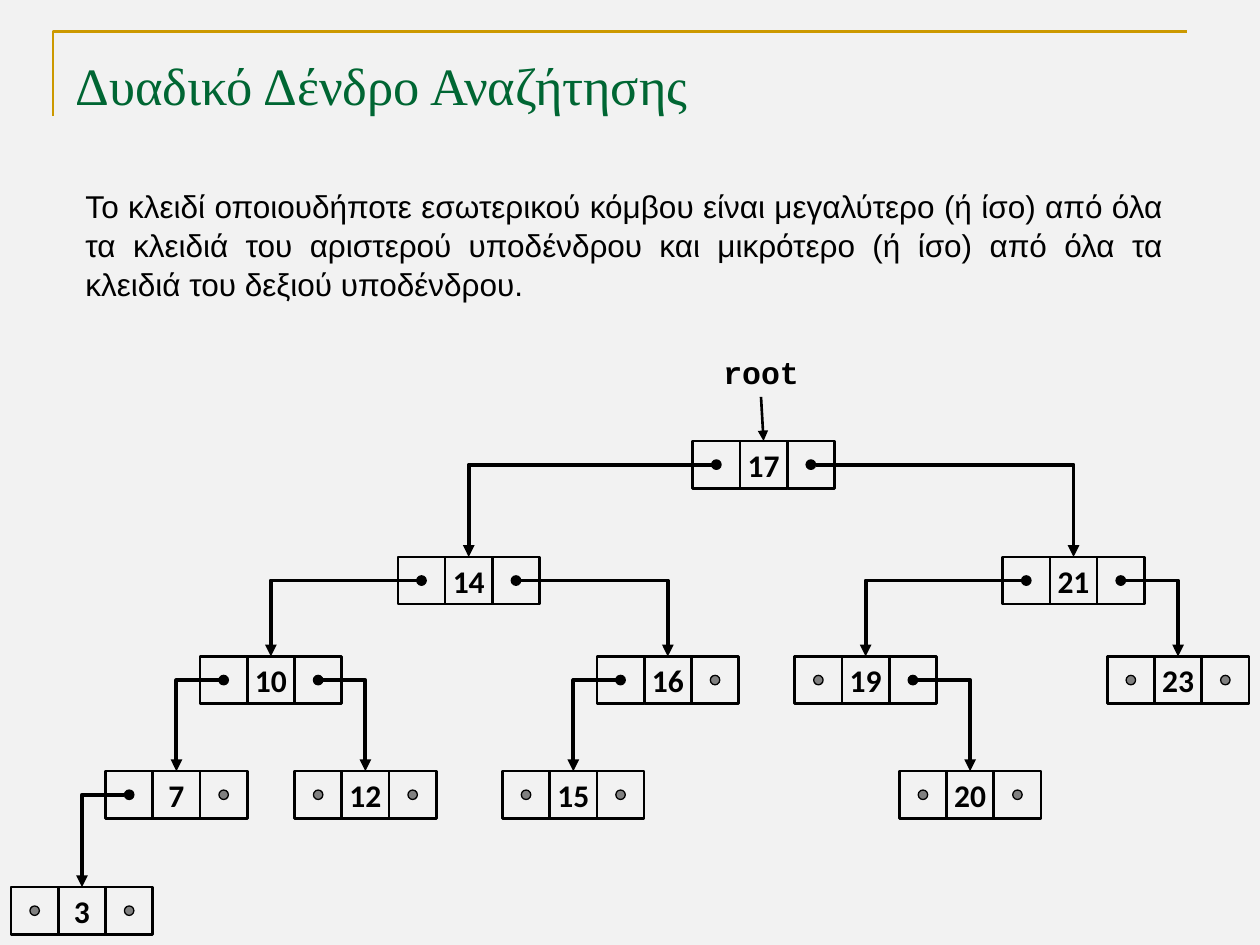
from dataclasses import dataclass
from typing import Optional

from lxml.etree import SubElement
from pptx import Presentation
from pptx.dml.color import RGBColor
from pptx.enum.shapes import MSO_CONNECTOR, MSO_SHAPE
from pptx.enum.text import MSO_ANCHOR, PP_ALIGN
from pptx.oxml.ns import qn
from pptx.util import Inches, Pt

PAPER = RGBColor(0xF2, 0xF2, 0xF2)
BLACK = RGBColor(0, 0, 0)
GREY = RGBColor(0x80, 0x80, 0x80)
GOLD = RGBColor(0xCC, 0x99, 0x00)
GREEN = RGBColor(0x00, 0x66, 0x33)

CELL = 0.375  # side of one square cell
DOT = 0.075  # diameter of a pointer dot
LEVEL_TOPS = (3.5, 4.42, 5.21, 6.12, 7.04)


@dataclass(frozen=True)
class Node:
    key: int
    center: float
    level: int
    left: Optional[int] = None
    right: Optional[int] = None

    @property
    def top(self) -> float:
        return LEVEL_TOPS[self.level]

    @property
    def middle(self) -> float:
        return self.top + CELL / 2


TREE = {node.key: node for node in (
    Node(17, 6.06, 0, 14, 21),
    Node(14, 3.72, 1, 10, 16),
    Node(21, 8.52, 1, 19, 23),
    Node(10, 2.15, 2, 7, 12),
    Node(16, 5.3, 2, left=15),
    Node(19, 6.87, 2, right=20),
    Node(23, 9.35, 2),
    Node(7, 1.4, 3, left=3),
    Node(12, 2.9, 3),
    Node(15, 4.55, 3),
    Node(20, 7.7, 3),
    Node(3, 0.65, 4),
)}


def add_span(para, text: str, font: str, size: float, color: RGBColor, bold=False):
    span = para.add_run()
    span.text = text
    span.font.name = font
    span.font.size = Pt(size)
    span.font.bold = bold
    span.font.color.rgb = color


def add_figure(page, kind, center: float, middle: float, side: float,
               fill: RGBColor, weight: float):
    figure = page.shapes.add_shape(
        kind, Inches(center - side / 2), Inches(middle - side / 2),
        Inches(side), Inches(side))
    figure.shadow.inherit = False
    figure.fill.solid()
    figure.fill.fore_color.rgb = fill
    figure.line.color.rgb = BLACK
    figure.line.width = Pt(weight)
    return figure


def add_node(page, node: Node):
    # Pointer cells and their dots
    for side, child in ((-1, node.left), (1, node.right)):
        x = node.center + side * CELL
        add_figure(page, MSO_SHAPE.RECTANGLE, x, node.middle, CELL, PAPER, 1.5)
        color = GREY if child is None else BLACK
        add_figure(page, MSO_SHAPE.OVAL, x, node.middle, DOT, color, 0.75)
    # Key cell
    box = add_figure(page, MSO_SHAPE.RECTANGLE, node.center, node.middle, CELL, PAPER, 1.5)
    frame = box.text_frame
    frame.word_wrap = False
    frame.vertical_anchor = MSO_ANCHOR.MIDDLE
    para = frame.paragraphs[0]
    para.alignment = PP_ALIGN.CENTER
    add_span(para, str(node.key), "Calibri", 18, BLACK, bold=True)


def add_arrow(page, kind, start: tuple, end: tuple, weight: float, tip: str):
    arrow = page.shapes.add_connector(kind, *map(Inches, start + end))
    arrow.line.color.rgb = BLACK
    arrow.line.width = Pt(weight)
    SubElement(arrow.line._get_or_add_ln(), qn(f"a:{tip}"), type="triangle")
    SubElement(arrow._element.spPr, qn("a:effectLst"))
    return arrow


def add_branch(page, parent: Node, child: Node, side: int):
    """Run sideways from the parent's dot, then down to the child."""
    start = parent.center + side * (CELL + DOT / 2)
    near, far = sorted((start, child.center))
    branch = add_arrow(page, MSO_CONNECTOR.ELBOW, (near, parent.middle),
                       (far, child.top), 2.25, "tailEnd")
    properties = branch._element.spPr
    properties.find(qn("a:prstGeom")).set("prst", "bentConnector2")
    if side < 0:  # a half turn plus a vertical flip mirrors the elbow
        transform = properties.find(qn("a:xfrm"))
        transform.set("rot", "10800000")
        transform.set("flipV", "1")


def add_text(page, bounds: tuple, text: str, font: str, alignment, bold=False):
    box = page.shapes.add_textbox(*map(Inches, bounds))
    box.text_frame.word_wrap = True
    para = box.text_frame.paragraphs[0]
    para.alignment = alignment
    add_span(para, text, font, 18, BLACK, bold)
    return para


def main():
    deck = Presentation()
    deck.slide_width, deck.slide_height = Inches(10), Inches(7.5)
    page = deck.slides.add_slide(deck.slide_layouts[5])
    page.background.fill.solid()
    page.background.fill.fore_color.rgb = PAPER

    # Corner rule around the title
    builder = page.shapes.build_freeform(Inches(0.42), Inches(0.92))
    builder.add_line_segments(
        [(Inches(0.42), Inches(0.25)), (Inches(9.42), Inches(0.25))], close=False)
    corner = builder.convert_to_shape()
    corner.shadow.inherit = False
    corner.fill.background()
    corner.line.color.rgb = GOLD
    corner.line.width = Pt(1.5)

    # Title
    title = page.shapes.title
    title.left, title.top = Inches(0.5), Inches(0.3)
    title.width, title.height = Inches(9), Inches(0.53)
    frame = title.text_frame
    frame.vertical_anchor = MSO_ANCHOR.TOP
    frame.margin_top, frame.margin_bottom = Inches(0.12), 0
    para = frame.paragraphs[0]
    para.alignment = PP_ALIGN.LEFT
    add_span(para, "Δυαδικό Δένδρο Αναζήτησης", "Times New Roman", 30, GREEN)

    # Tree
    for node in TREE.values():
        add_node(page, node)
    for node in TREE.values():
        for side, key in ((-1, node.left), (1, node.right)):
            if key is not None:
                add_branch(page, node, TREE[key], side)

    # Root pointer
    root = TREE[17]
    add_arrow(page, MSO_CONNECTOR.STRAIGHT, (root.center, root.top),
              (6.04, 3.15), 1.5, "headEnd")
    add_text(page, (5.58, 2.75, 0.92, 0.4), "root", "Courier New",
             PP_ALIGN.CENTER, bold=True)

    # Definition
    definition = add_text(
        page, (0.58, 1.42, 8.75, 1.01),
        "Το κλειδί οποιουδήποτε εσωτερικού κόμβου είναι μεγαλύτερο (ή ίσο) από όλα "
        "τα κλειδιά του αριστερού υποδένδρου και μικρότερο (ή ίσο) από όλα τα "
        "κλειδιά του δεξιού υποδένδρου.", "Arial", PP_ALIGN.JUSTIFY)
    definition.line_spacing = 1.04

    deck.save("out.pptx")


if __name__ == "__main__":
    main()
